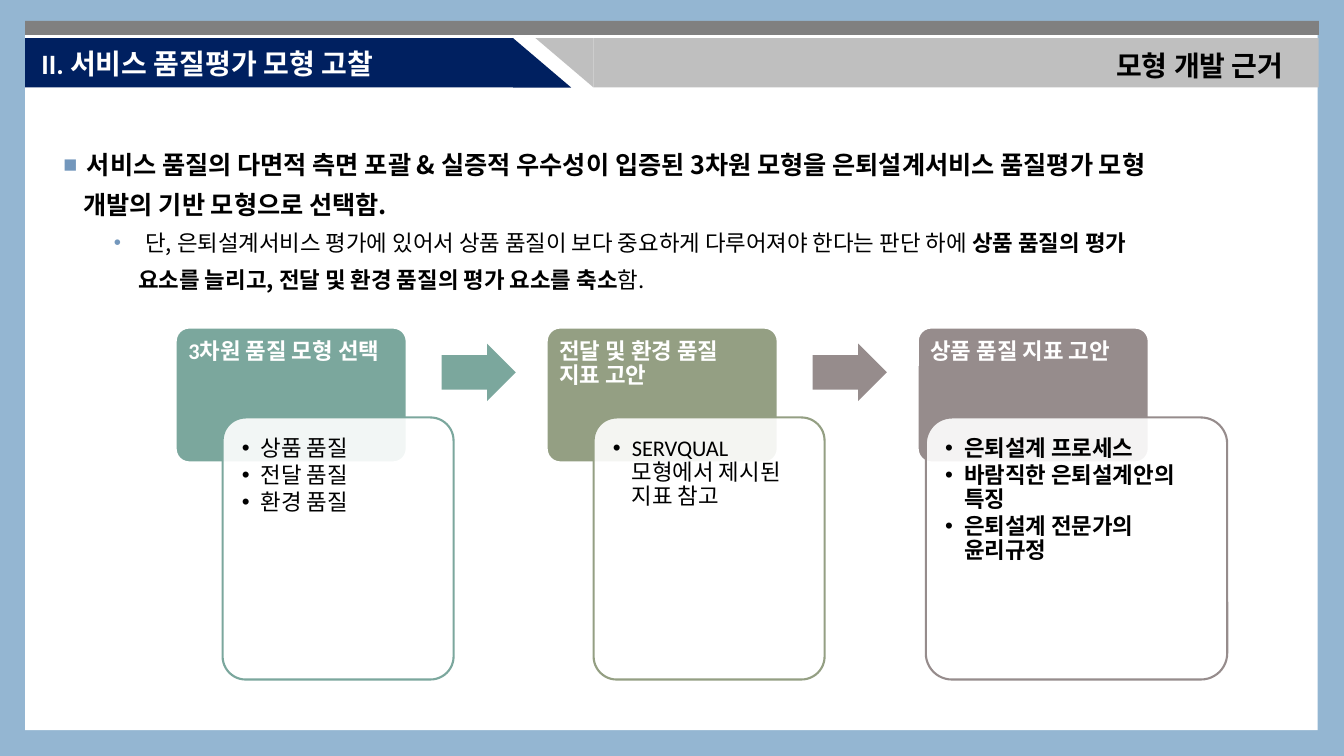
from pptx import Presentation
from pptx.dml.color import RGBColor
from pptx.enum.shapes import MSO_SHAPE
from pptx.enum.text import MSO_ANCHOR, PP_ALIGN
from pptx.oxml.ns import qn
from pptx.util import Pt
from lxml.etree import SubElement

COLORS = {
    "background": "94B6D2", "white": "FFFFFF", "black": "000000",
    "strip": "808080", "silver": "BFBFBF", "navy": "002060", "bullet": "7397BC",
    "teal": "7BA79D", "olive": "949F83", "taupe": "968C8C",
}
BODY_FONT = "Noto Sans CJK KR"
STEP_FONT = "Calibri"

BODY_LINES = [
    (16.8, "■", 18, [("서비스 품질의 다면적 측면 포괄 & 실증적 우수성이 입증된 "
                      "3차원 모형을 은퇴설계서비스 품질평가 모형", True)]),
    (14.4, None, 18, [("개발의 기반 모형으로 선택함.", True)]),
    (58.5, "•", 16, [("단, 은퇴설계서비스 평가에 있어서 상품 품질이 보다 중요하게 "
                      "다루어져야 한다는 판단 하에 ", False), ("상품 품질의 평가", True)]),
    (53.5, None, 16, [("요소를 늘리고, 전달 및 환경 품질의 평가 요소를 축소", True), ("함.", False)]),
]
BULLET_LEFT = {"■": 0, "•": 36}

STEPS = [
    ("teal", ["3차원 품질 모형 선택"], ["상품 품질", "전달 품질", "환경 품질"], 33.5, 165, False),
    ("olive", ["전달 및 환경 품질", "지표 고안"], ["SERVQUAL모형에서 제시된 지표 참고"], 33.5, 165, False),
    ("taupe", ["상품 품질 지표 고안"],
     ["은퇴설계 프로세스", "바람직한 은퇴설계안의 특징", "은퇴설계 전문가의 윤리규정"], 5.8, 215.3, True),
]


def rgb(name):
    return RGBColor.from_string(COLORS[name])


def add_block(slide, kind, left, top, width, height, fill, line=None):
    shape = slide.shapes.add_shape(kind, Pt(left), Pt(top), Pt(width), Pt(height))
    shape.shadow.inherit = False
    shape.fill.solid()
    shape.fill.fore_color.rgb = rgb(fill)
    if line:
        shape.line.color.rgb = rgb(line)
        shape.line.width = Pt(1.5)
    else:
        shape.line.fill.background()
    return shape


def add_flipped_triangle(slide, left, top, width, height, fill):
    shape = add_block(slide, MSO_SHAPE.RIGHT_TRIANGLE, left, top, width, height, fill)
    transform = shape.element.spPr.find(qn("a:xfrm"))
    transform.set("flipH", "1")
    transform.set("flipV", "1")


def add_text_box(slide, left, top, width, height, insets):
    frame = slide.shapes.add_textbox(Pt(left), Pt(top), Pt(width), Pt(height)).text_frame
    frame.word_wrap = True
    frame.margin_left, frame.margin_top, frame.margin_right, frame.margin_bottom = map(Pt, insets)
    return frame


def add_run(paragraph, text, font, size, color, bold):
    run = paragraph.add_run()
    run.text = text
    run.font.name = font
    run.font.size = Pt(size)
    run.font.bold = bold
    run.font.color.rgb = rgb(color)


def set_indent(paragraph, margin, indent, bullet=None, color=None, percent=100):
    properties = paragraph._p.get_or_add_pPr()
    properties.set("marL", str(Pt(margin)))
    properties.set("indent", str(Pt(indent)))
    if bullet:
        if color:
            holder = SubElement(properties, qn("a:buClr"))
            SubElement(holder, qn("a:srgbClr")).set("val", COLORS[color])
        SubElement(properties, qn("a:buSzPct")).set("val", str(percent * 1000))
        SubElement(properties, qn("a:buFont")).set("typeface", "Arial")
        SubElement(properties, qn("a:buChar")).set("char", bullet)


def add_header(slide, left, top, width):
    bar_top, bar_height, slant = top + 12.2, 35.3, 41.5
    navy_width, silver_left = 348.5, 406
    add_block(slide, MSO_SHAPE.RECTANGLE, left, top, width, 10, "strip")
    add_block(slide, MSO_SHAPE.RECTANGLE, left + silver_left, bar_top,
              width - silver_left, bar_height, "silver")
    title = add_block(slide, MSO_SHAPE.RECTANGLE, left, bar_top, navy_width, bar_height, "navy")
    add_block(slide, MSO_SHAPE.RIGHT_TRIANGLE, left + navy_width, bar_top, slant, bar_height, "navy")
    add_flipped_triangle(slide, left + silver_left - slant, bar_top, slant, bar_height, "silver")
    frame = title.text_frame
    frame.vertical_anchor = MSO_ANCHOR.MIDDLE
    frame.paragraphs[0].alignment = PP_ALIGN.LEFT
    add_run(frame.paragraphs[0], " II. 서비스 품질평가 모형 고찰", STEP_FONT, 20, "white", True)
    topic = add_text_box(slide, left + width - 182, bar_top + 3.6, 164, 31.5, (7.2, 3.6, 7.2, 3.6))
    topic.paragraphs[0].alignment = PP_ALIGN.RIGHT
    add_run(topic.paragraphs[0], "모형 개발 근거", "Arial", 20, "black", True)


def add_body(slide, left, top, width, height):
    frame = add_text_box(slide, left, top, width, height, (7.2, 2.9, 2.9, 2.9))
    for index, (margin, bullet, size, runs) in enumerate(BODY_LINES):
        paragraph = frame.add_paragraph() if index else frame.paragraphs[0]
        paragraph.line_spacing = 1.1
        paragraph.space_before = Pt(5)
        indent = BULLET_LEFT[bullet] - margin if bullet else 0
        set_indent(paragraph, margin, indent, bullet, "bullet", 92)
        for text, bold in runs:
            add_run(paragraph, text, BODY_FONT, size, "black", bold)


def add_step(slide, left, top, step):
    color, heading, items, card_offset, card_width, bold = step
    card_left, card_top, card_height = left + card_offset, top + 64.2, 187.2
    tab = add_block(slide, MSO_SHAPE.ROUNDED_RECTANGLE, left, top, 165, 96.3, color, "white")
    tab.adjustments[0] = 0.1
    frame = add_text_box(slide, left, top, 165, 64.2, (9, 9, 9, 4.8))
    paragraph = frame.paragraphs[0]
    paragraph.line_spacing = 0.9
    for index, text in enumerate(heading):
        if index:
            paragraph.add_line_break()
        add_run(paragraph, text, STEP_FONT, 16, "white", True)
    card = add_block(slide, MSO_SHAPE.ROUNDED_RECTANGLE, card_left, card_top,
                     card_width, card_height, "white", color)
    card.adjustments[0] = 0.1
    fill_color = card.element.spPr.find(qn("a:solidFill"))[0]
    SubElement(fill_color, qn("a:alpha")).set("val", "90000")
    frame = add_text_box(slide, card_left + 4.8, card_top + 4.8,
                         card_width - 9.6, card_height - 9.6, (9, 9, 9, 9))
    for index, text in enumerate(items):
        paragraph = frame.add_paragraph() if index else frame.paragraphs[0]
        paragraph.line_spacing = 0.9
        paragraph.space_after = Pt(2)
        set_indent(paragraph, 13.5, -13.5, "•")
        add_run(paragraph, text, STEP_FONT, 16, "black", bold)


def add_process(slide, left, top, pitch):
    for index, step in enumerate(STEPS):
        step_left = left + index * pitch
        if index:
            arrow_color = "teal" if index == 1 else step[0]
            arrow = add_block(slide, MSO_SHAPE.RIGHT_ARROW, step_left - 75, top + 11.5,
                              53, 41, arrow_color)
            arrow.adjustments[0] = 0.6
        add_step(slide, step_left, top, step)


def main():
    presentation = Presentation()
    presentation.slide_width, presentation.slide_height = Pt(960), Pt(540)
    slide = presentation.slides.add_slide(presentation.slide_layouts[6])
    slide.background.fill.solid()
    slide.background.fill.fore_color.rgb = rgb("background")
    add_block(slide, MSO_SHAPE.RECTANGLE, 18, 19.5, 923.3, 502, "white")
    add_header(slide, 18, 15, 924)
    add_process(slide, 125.5, 234, 265)
    add_body(slide, 38.2, 101.5, 882, 317.5)
    presentation.save("out.pptx")


if __name__ == "__main__":
    main()
